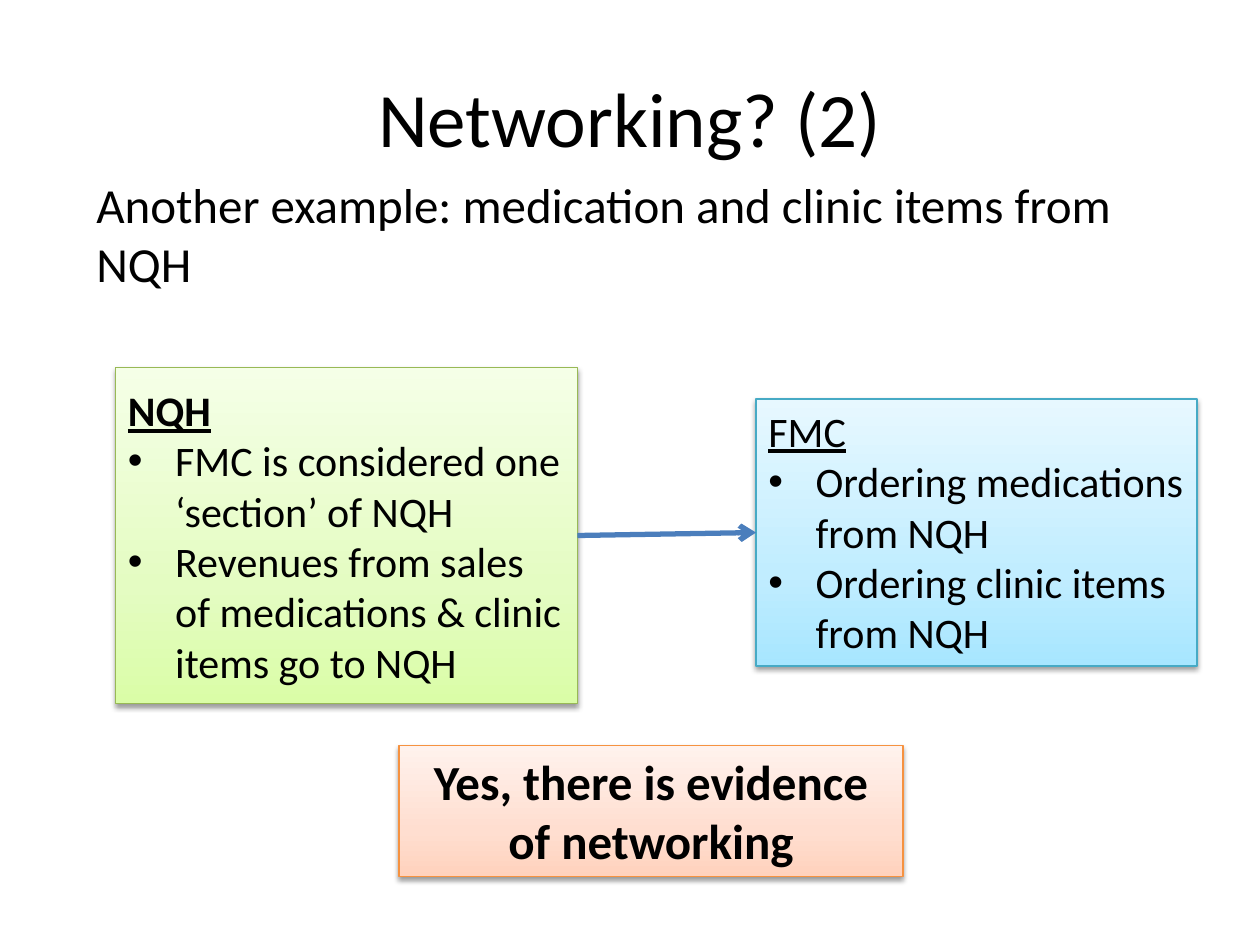
import copy
from dataclasses import dataclass

import pptx
import pptx.dml.color
import pptx.enum.shapes
import pptx.enum.text
import pptx.oxml
import pptx.oxml.ns
import pptx.util

Pt = pptx.util.Pt
RGB = pptx.dml.color.RGBColor.from_string
Align = pptx.enum.text.PP_ALIGN
Anchor = pptx.enum.text.MSO_ANCHOR
AutoSize = pptx.enum.text.MSO_AUTO_SIZE
qn = pptx.oxml.ns.qn
NAMESPACE = pptx.oxml.ns.nsdecls("a")


@dataclass(frozen=True)
class Theme:
    font: str = "Calibri"
    text: str = "000000"
    arrow: str = "4B7EBC"
    # Gradient colours run from the bottom edge to the top edge.
    green: tuple = ("DAFDA7", "E4FCC2", "F5FFE7")
    green_line: str = "98B955"
    blue: tuple = ("A7E6FF", "C1EDFF", "E7F8FF")
    blue_line: str = "46AAC5"
    orange: tuple = ("FFD2BD", "FFDED0", "FFF2ED")
    orange_line: str = "F69240"
    title_size: int = 44
    statement_size: int = 28
    list_size: int = 24


theme = Theme()


def write(para, text, *, size, bold=False, underline=False, align=Align.LEFT, bullet=False):
    para.alignment = align
    span = para.add_run()
    span.text = text
    span.font.name = theme.font
    span.font.size = Pt(size)
    span.font.bold = bold
    span.font.underline = underline
    span.font.color.rgb = RGB(theme.text)
    if bullet:
        properties = para._p.get_or_add_pPr()
        properties.set("marL", str(Pt(27)))
        properties.set("indent", str(-Pt(27)))
        for tag in (f'<a:buFont {NAMESPACE} typeface="Arial"/>', f'<a:buChar {NAMESPACE} char="•"/>'):
            properties.append(pptx.oxml.parse_xml(tag))


def add_panel(page, left, top, width, height, colours, line):
    """Add a rectangle with a three-stop vertical gradient and a soft shadow."""
    panel = page.shapes.add_shape(
        pptx.enum.shapes.MSO_SHAPE.RECTANGLE, Pt(left), Pt(top), Pt(width), Pt(height))
    panel.fill.gradient()
    panel.fill.gradient_angle = 90
    first_stop = panel._element.spPr.find(".//" + qn("a:gs"))
    first_stop.addnext(copy.deepcopy(first_stop))
    for stop, position, colour in zip(panel.fill.gradient_stops, (0, 0.35, 1), colours):
        stop.position = position
        stop.color.rgb = RGB(colour)
    panel.line.color.rgb = RGB(line)
    panel.line.width = Pt(0.75)
    panel.shadow.inherit = False
    panel._element.spPr.find(qn("a:effectLst")).append(pptx.oxml.parse_xml(
        f'<a:outerShdw {NAMESPACE} blurRad="{Pt(3.1)}" dist="{Pt(1.6)}" dir="5400000" rotWithShape="0">'
        '<a:srgbClr val="000000"><a:alpha val="38000"/></a:srgbClr></a:outerShdw>'))
    panel.text_frame.word_wrap = True
    return panel


deck = pptx.Presentation()
deck.slide_width, deck.slide_height = Pt(720), Pt(540)
page = deck.slides.add_slide(deck.slide_layouts.get_by_name("Title Only"))

title = page.shapes.title
title.left, title.top, title.width, title.height = Pt(36), Pt(21.6), Pt(648), Pt(90)
title.text_frame.vertical_anchor = Anchor.MIDDLE
write(title.text_frame.paragraphs[0], "Networking? (2)", size=theme.title_size, align=Align.CENTER)

example = page.shapes.add_textbox(Pt(48), Pt(96), Pt(648), Pt(75))
example.text_frame.word_wrap = True
example.text_frame.auto_size = AutoSize.SHAPE_TO_FIT_TEXT
write(example.text_frame.paragraphs[0], "Another example: medication and clinic items from NQH",
      size=theme.statement_size)

hospital = add_panel(page, 66, 210, 264, 192, theme.green, theme.green_line)
hospital.text_frame.vertical_anchor = Anchor.MIDDLE
clinic = add_panel(page, 432, 228, 252, 152.6, theme.blue, theme.blue_line)
clinic.text_frame.vertical_anchor = Anchor.TOP
clinic.text_frame.auto_size = AutoSize.SHAPE_TO_FIT_TEXT

panel_texts = [
    (hospital, "NQH", True, ["FMC is considered one ‘section’ of NQH",
                             "Revenues from sales of medications & clinic items go to NQH"]),
    (clinic, "FMC", False, ["Ordering medications from NQH", "Ordering clinic items from NQH"]),
]
for panel, heading, bold, items in panel_texts:
    write(panel.text_frame.paragraphs[0], heading, size=theme.list_size, bold=bold, underline=True)
    for item in items:
        write(panel.text_frame.add_paragraph(), item, size=theme.list_size, bullet=True)

arrow = page.shapes.add_connector(pptx.enum.shapes.MSO_CONNECTOR.STRAIGHT, 0, 0, 0, 0)
arrow.begin_connect(hospital, 3)
arrow.end_connect(clinic, 1)
arrow.line.color.rgb = RGB(theme.arrow)
arrow.line.width = Pt(3)
arrow.line._get_or_add_ln().append(pptx.oxml.parse_xml(f'<a:tailEnd {NAMESPACE} type="arrow"/>'))
arrow._element.spPr.append(pptx.oxml.parse_xml(f"<a:effectLst {NAMESPACE}/>"))

conclusion = add_panel(page, 228, 426, 288, 75, theme.orange, theme.orange_line)
conclusion.text_frame.vertical_anchor = Anchor.TOP
conclusion.text_frame.auto_size = AutoSize.SHAPE_TO_FIT_TEXT
write(conclusion.text_frame.paragraphs[0], "Yes, there is evidence of networking",
      size=theme.statement_size, bold=True, align=Align.CENTER)

deck.save("out.pptx")
